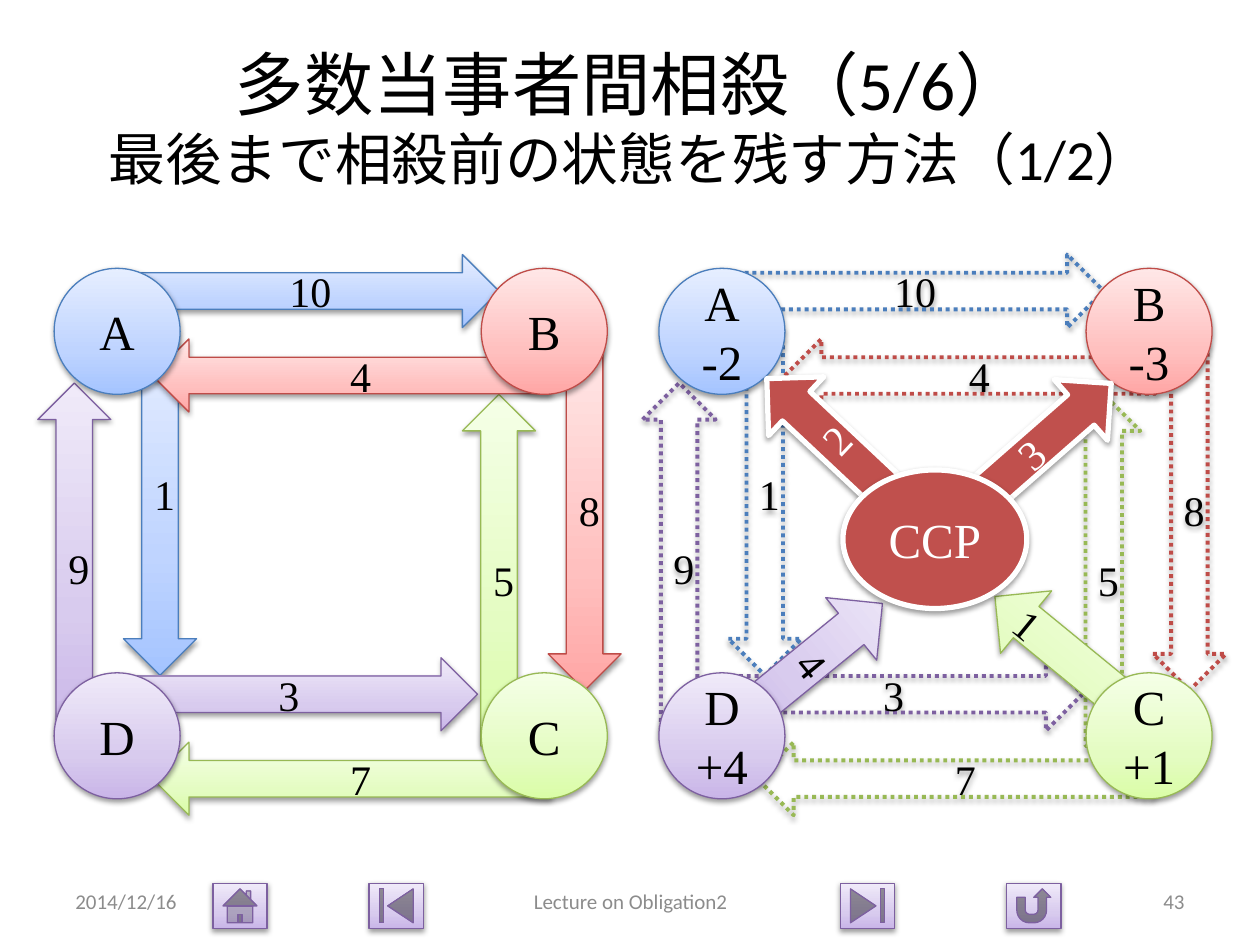
from dataclasses import dataclass

from lxml.etree import SubElement
from pptx import Presentation
from pptx.dml.color import RGBColor
from pptx.enum.dml import MSO_LINE
from pptx.enum.shapes import MSO_SHAPE
from pptx.enum.text import MSO_ANCHOR, PP_ALIGN
from pptx.oxml.ns import qn
from pptx.util import Inches, Pt

BLACK = RGBColor(0x00, 0x00, 0x00)
WHITE = RGBColor(0xFF, 0xFF, 0xFF)
GRAY = RGBColor(0x8C, 0x8C, 0x8C)
RED = RGBColor(0xC0, 0x50, 0x4D)

UP, DOWN = MSO_SHAPE.UP_ARROW, MSO_SHAPE.DOWN_ARROW
LEFT, RIGHT = MSO_SHAPE.LEFT_ARROW, MSO_SHAPE.RIGHT_ARROW
PANEL_GAP = 4.8  # distance from the left panel to the right panel


@dataclass(frozen=True)
class Theme:
    line: RGBColor
    stops: tuple[RGBColor, ...] = ()  # bottom to top
    solid: RGBColor | None = None
    width: float = 0.75
    text: RGBColor = BLACK


def shaded(line: str, *stops: str) -> Theme:
    return Theme(RGBColor.from_string(line), tuple(map(RGBColor.from_string, stops)))


PARTY_A = shaded("4B7EBC", "A4C4FF", "BFD4FF", "E6EEFF")
PARTY_B = shaded("BF4C48", "FFA6A5", "FFC0BF", "FFE7E7")
PARTY_C = shaded("98B955", "DAFDA7", "E4FCC2", "F5FFE7")
PARTY_D = shaded("7D60A0", "C9B5E8", "D8CBEE", "F0EAF9")
CLEARING = Theme(WHITE, solid=RED, width=3, text=WHITE)


@dataclass(frozen=True)
class Arrow:
    kind: MSO_SHAPE
    left: float
    top: float
    width: float
    height: float
    theme: Theme
    amount: str
    rotation: float = 0
    align: PP_ALIGN = PP_ALIGN.CENTER


@dataclass(frozen=True)
class Party:
    name: str
    left: float
    top: float
    theme: Theme
    balance: str


DEBTS = [
    Arrow(DOWN, 0.98, 2.63, 0.58, 2.73, PARTY_A, "1"),
    Arrow(UP, 0.3, 3.04, 0.58, 2.79, PARTY_D, "9"),
    Arrow(RIGHT, 0.94, 5.22, 2.85, 0.58, PARTY_D, "3"),
    Arrow(LEFT, 1.21, 5.89, 3.16, 0.58, PARTY_C, "7"),
    Arrow(UP, 3.67, 3.13, 0.58, 2.79, PARTY_C, "5"),
    Arrow(DOWN, 4.35, 2.75, 0.58, 2.73, PARTY_B, "8"),
    Arrow(LEFT, 1.21, 2.69, 3.16, 0.58, PARTY_B, "4"),
    Arrow(RIGHT, 1.11, 2.02, 2.85, 0.58, PARTY_A, "10"),
]
SHORT_DEBT = Arrow(LEFT, 1.43, 2.69, 2.94, 0.58, PARTY_B, "4")

PARTIES = [
    Party("A", 0.43, 2.13, PARTY_A, "-2"),
    Party("B", 3.82, 2.13, PARTY_B, "-3"),
    Party("C", 3.82, 5.34, PARTY_C, "+1"),
    Party("D", 0.43, 5.34, PARTY_D, "+4"),
]

SETTLEMENTS = [
    Arrow(UP, 6.24, 2.8, 0.64, 1.3, CLEARING, "2", 313.2),
    Arrow(RIGHT, 7.47, 3.23, 1.54, 0.64, CLEARING, "3", 318.8),
    Arrow(UP, 6.18, 4.55, 0.64, 1.3, PARTY_D, "4", 50.8, PP_ALIGN.LEFT),
    Arrow(LEFT, 7.73, 4.88, 1.47, 0.64, PARTY_C, "1", 39.3, PP_ALIGN.LEFT),
]

NAVIGATION = [
    (MSO_SHAPE.ACTION_BUTTON_HOME, 1.69),
    (MSO_SHAPE.ACTION_BUTTON_BEGINNING, 2.93),
    (MSO_SHAPE.ACTION_BUTTON_END, 6.67),
    (MSO_SHAPE.ACTION_BUTTON_RETURN, 7.99),
]


def paint_gradient(shape, stops: tuple[RGBColor, ...]) -> None:
    shape.fill.gradient()
    shape.fill.gradient_angle = 90
    stop_list = shape._element.spPr.find(qn("a:gradFill")).find(qn("a:gsLst"))
    for old in list(stop_list):
        stop_list.remove(old)
    for position, color in zip((0, 35, 100), stops):
        stop = SubElement(stop_list, qn("a:gs"), pos=str(position * 1000))
        SubElement(stop, qn("a:srgbClr"), val=str(color))


def add_shadow(shape) -> None:
    shape.shadow.inherit = False
    effects = shape._element.spPr.find(qn("a:effectLst"))
    shadow = SubElement(effects, qn("a:outerShdw"), blurRad=str(Pt(3.1)),
                        dist=str(Pt(1.6)), dir="5400000", rotWithShape="0")
    color = SubElement(shadow, qn("a:srgbClr"), val="000000")
    SubElement(color, qn("a:alpha"), val="38000")


def draw_shape(slide, kind: MSO_SHAPE, left: float, top: float, width: float,
               height: float, theme: Theme, lines: tuple[str, ...] = (),
               size: float = 24, dotted: bool = False,
               align: PP_ALIGN = PP_ALIGN.CENTER, rotation: float = 0) -> None:
    shape = slide.shapes.add_shape(kind, Inches(left), Inches(top),
                                   Inches(width), Inches(height))
    shape.rotation = rotation
    shape.line.color.rgb = theme.line
    shape.line.width = Pt(theme.width)
    if dotted:
        shape.fill.background()
        shape.line.width = Pt(2.25)
        shape.line.dash_style = MSO_LINE.ROUND_DOT
    elif theme.solid is not None:
        shape.fill.solid()
        shape.fill.fore_color.rgb = theme.solid
    else:
        paint_gradient(shape, theme.stops)
    add_shadow(shape)
    if lines:
        frame = shape.text_frame
        frame.text = "\n".join(lines)
        frame.vertical_anchor = MSO_ANCHOR.MIDDLE
        for paragraph in frame.paragraphs:
            paragraph.alignment = align
            paragraph.font.name = "Times New Roman"
            paragraph.font.size = Pt(size)
            paragraph.font.color.rgb = theme.text


def draw_arrow(slide, arrow: Arrow, shift: float = 0, dotted: bool = False) -> None:
    draw_shape(slide, arrow.kind, arrow.left + shift, arrow.top, arrow.width,
               arrow.height, arrow.theme, (arrow.amount,), dotted=dotted,
               align=arrow.align, rotation=arrow.rotation)


def draw_party(slide, party: Party, settled: bool) -> None:
    lines = (party.name, party.balance) if settled else (party.name,)
    draw_shape(slide, MSO_SHAPE.OVAL, party.left + PANEL_GAP * settled, party.top,
               1, 1, party.theme, lines, size=28)


def draw_text(slide, left: float, top: float, width: float, height: float,
              lines: list[tuple[str, float]], color: RGBColor, align: PP_ALIGN) -> None:
    frame = slide.shapes.add_textbox(Inches(left), Inches(top), Inches(width),
                                     Inches(height)).text_frame
    frame.word_wrap = True
    frame.vertical_anchor = MSO_ANCHOR.MIDDLE
    paragraph = frame.paragraphs[0]
    paragraph.alignment = align
    paragraph.font.name = "Calibri"
    paragraph.font.color.rgb = color
    for number, (text, size) in enumerate(lines):
        if number:
            paragraph.add_line_break()
        run = paragraph.add_run()
        run.text = text
        run.font.size = Pt(size)


def main() -> None:
    prs = Presentation()
    prs.slide_width, prs.slide_height = Inches(10), Inches(7.5)
    slide = prs.slides.add_slide(prs.slide_layouts[6])

    # Navigation buttons, title and footer
    for button, left in NAVIGATION:
        draw_shape(slide, button, left, 7.01, 0.43, 0.36, PARTY_D)
    draw_text(slide, 0.5, 0.3, 9, 1.25,
              [("多数当事者間相殺（5/6）", 39.6),
               ("最後まで相殺前の状態を残す方法（1/2）", 32.4)], BLACK, PP_ALIGN.CENTER)
    for left, width, text, align in [
        (0.5, 2.33, "2014/12/16", PP_ALIGN.LEFT),
        (3.42, 3.17, "Lecture on Obligation2", PP_ALIGN.CENTER),
        (7.17, 2.33, "43", PP_ALIGN.RIGHT),
    ]:
        draw_text(slide, left, 6.95, width, 0.4, [(text, 12)], GRAY, align)

    # Left panel: debts before set-off
    for debt in DEBTS:
        draw_arrow(slide, debt)
    for party in PARTIES:
        draw_party(slide, party, settled=False)

    # Right panel: former debts dotted, balances settled through the CCP
    for debt in DEBTS:
        draw_arrow(slide, SHORT_DEBT if debt.amount == "4" else debt, PANEL_GAP, dotted=True)
    for party in PARTIES[:2]:
        draw_party(slide, party, settled=True)
    for settlement in SETTLEMENTS:
        draw_arrow(slide, settlement)
    draw_shape(slide, MSO_SHAPE.OVAL, 6.69, 3.73, 1.46, 1.1, CLEARING, ("CCP",), size=28)
    for party in PARTIES[2:]:
        draw_party(slide, party, settled=True)

    prs.save("out.pptx")


if __name__ == "__main__":
    main()
